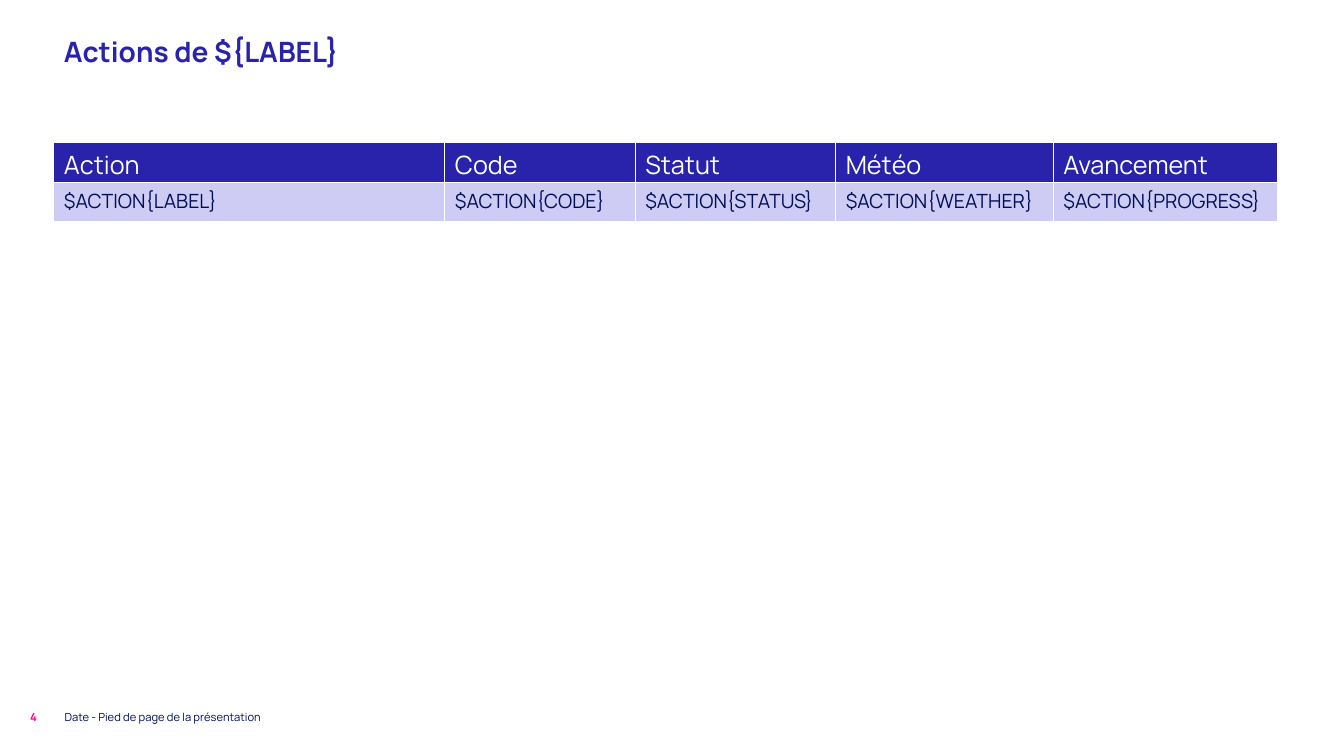
from lxml import etree
from pptx import Presentation
from pptx.dml.color import RGBColor
from pptx.enum.text import MSO_ANCHOR
from pptx.oxml.ns import qn
from pptx.util import Pt

TOP, MIDDLE = MSO_ANCHOR.TOP, MSO_ANCHOR.MIDDLE
FONT = "Manrope"
COLORS = {
    "indigo": "2823AA",
    "navy": "000F55",
    "pink": "FF0087",
    "lavender": "CECCF5",
    "white": "FFFFFF",
}


def style_text(frame, size, color, bold=False):
    for paragraph in frame.paragraphs:
        for span in paragraph.runs:
            span.font.name = FONT
            span.font.size = Pt(size)
            span.font.bold = bold
            span.font.color.rgb = RGBColor.from_string(COLORS[color])


def paint_cell(cell, fill):
    """Give a cell thin white borders and a solid fill."""
    properties = cell._tc.get_or_add_tcPr()
    for side in ("lnL", "lnR", "lnT", "lnB"):
        line = etree.SubElement(properties, qn(f"a:{side}"), w=str(Pt(1)))
        solid = etree.SubElement(line, qn("a:solidFill"))
        etree.SubElement(solid, qn("a:srgbClr"), val=COLORS["white"])
    cell.fill.solid()
    cell.fill.fore_color.rgb = RGBColor.from_string(COLORS[fill])


deck = Presentation()
deck.slide_width, deck.slide_height = Pt(960), Pt(540)
page = deck.slides.add_slide(deck.slide_layouts[6])

# Title, footer and page number
texts = [
    ("Date - Pied de page de la présentation", (39, 502, 312, 20), 8, "navy", False, MIDDLE),
    ("4", (14.4, 502, 42.5, 20), 8, "pink", True, MIDDLE),
    ("Actions de ${LABEL}", (38.5, 21, 878, 61), 20, "indigo", True, TOP),
]
for text, bounds, size, color, bold, anchor in texts:
    box = page.shapes.add_textbox(*map(Pt, bounds))
    frame = box.text_frame
    frame.word_wrap = True
    frame.vertical_anchor = anchor
    frame.text = text
    style_text(frame, size, color, bold)

# Table of actions: heading, placeholder field, column width
columns = [
    ("Action", "LABEL", 279.3),
    ("Code", "CODE", 136),
    ("Statut", "STATUS", 143.2),
    ("Météo", "WEATHER", 155.5),
    ("Avancement", "PROGRESS", 160.3),
]
row_heights = [24.5, 28]
table_width = sum(width for _, _, width in columns)
table = page.shapes.add_table(
    len(row_heights), len(columns),
    Pt(38.5), Pt(101.7), Pt(table_width), Pt(sum(row_heights)),
).table
for row, height in zip(table.rows, row_heights):
    row.height = Pt(height)

for index, (heading, field, width) in enumerate(columns):
    table.columns[index].width = Pt(width)
    rows = [
        (heading, 18, "white", "indigo"),
        (f"$ACTION{{{field}}}", 14, "navy", "lavender"),
    ]
    for row_index, (text, size, color, fill) in enumerate(rows):
        cell = table.cell(row_index, index)
        cell.text_frame.text = text
        style_text(cell.text_frame, size, color)
        paint_cell(cell, fill)

deck.save("out.pptx")
